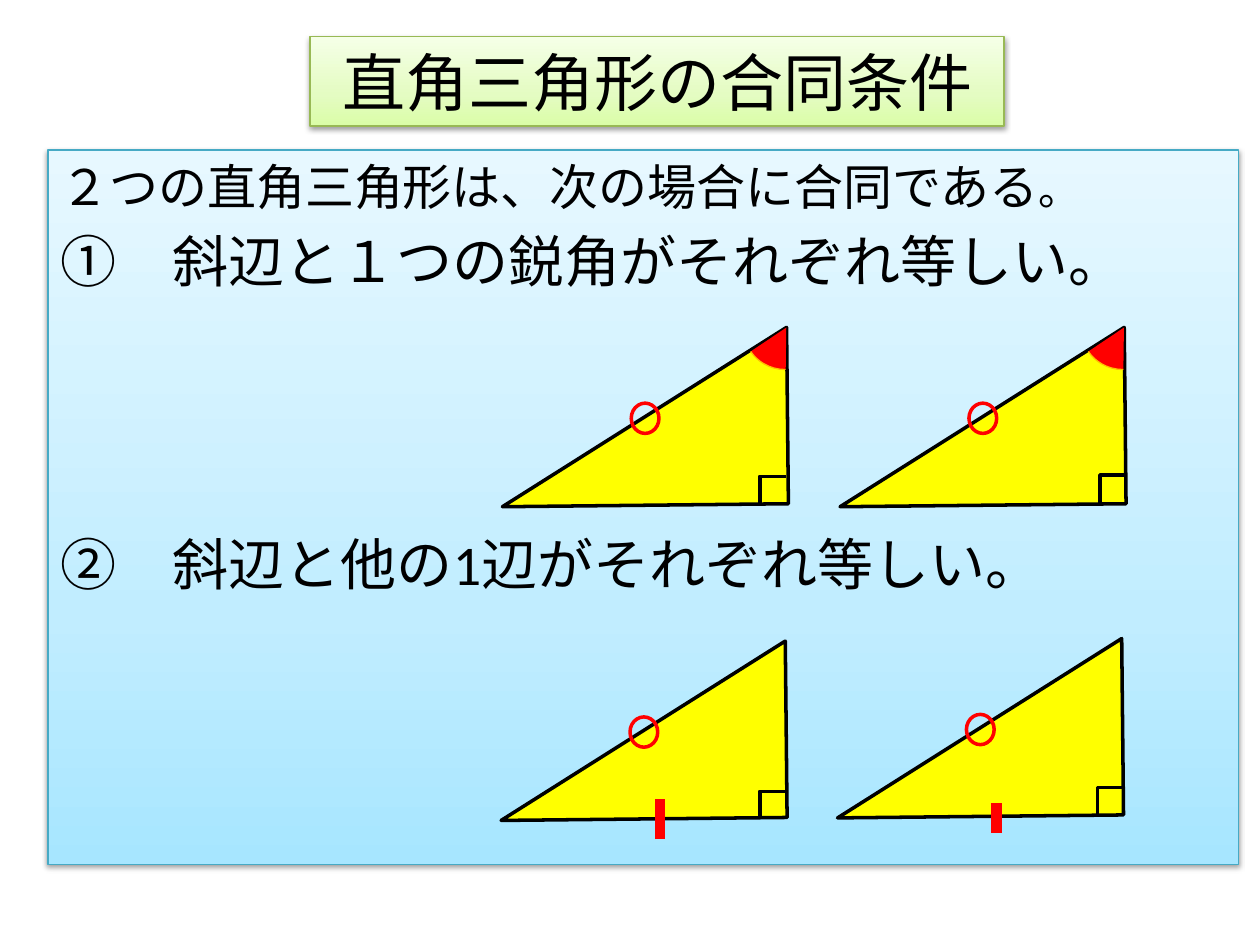
from copy import deepcopy

from lxml.etree import SubElement
from pptx import Presentation
from pptx.dml.color import RGBColor
from pptx.enum.shapes import MSO_CONNECTOR, MSO_SHAPE
from pptx.enum.text import MSO_ANCHOR, MSO_AUTO_SIZE, PP_ALIGN
from pptx.oxml import parse_xml
from pptx.oxml.ns import nsdecls, qn
from pptx.util import Inches, Pt

THEME = {
    "font": "Calibri", "text": "000000", "outline": "000000",
    "triangle": "FFFF00", "mark": "FF0000", "angle_edge": "FFC000",
    "title_size": 36, "lead_size": 28, "stop_size": 24, "condition_size": 32,
    "title_gradient": [(0, "DAFDA7"), (0.35, "E4FCC2"), (1, "F5FFE7")],
    "title_edge": "98B955",
    "body_gradient": [(0, "A7E6FF"), (0.35, "C1EDFF"), (1, "E7F8FF")],
    "body_edge": "46AAC5",
}

TITLE = "直角三角形の合同条件"
TITLE_BOX = (2.46, 0.29, 5.51, 0.71)
BODY_BOX = (0.38, 1.19, 9.45, 5.67)
LEAD, LEAD_STOP = "２つの直角三角形は、次の場合に合同である", "。"
# condition, space above in points (the second leaves room for the first figures)
CONDITIONS = [
    ("①\u3000斜辺と１つの鋭角がそれぞれ等しい。", 6.4),
    ("②\u3000斜辺と他の1辺がそれぞれ等しい。", 135),
]
# triangle corner, right-angle mark corner, base tick (x, bottom, top) or None
FIGURES = [
    ((3.98, 2.61), (6.03, 3.78), None),
    ((6.66, 2.61), (8.73, 3.77), None),
    ((3.97, 5.10), (6.03, 6.28), (5.24, 6.66, 6.34)),
    ((6.64, 5.08), (8.71, 6.25), (7.91, 6.61, 6.37)),
]
TRIANGLE_SIZE = (2.27, 1.40)
TRIANGLE_TILT = 359.4
RIGHT_ANGLE_SIZE = (0.21, 0.22)
CIRCLE_OFFSET, CIRCLE_SIZE = (1.03, 0.59), (0.22, 0.24)
ANGLE_OFFSET, ANGLE_SIZE = (1.92, -0.34), (0.68, 0.66)
ANGLE_TURN, ANGLE_SPAN = 151.1, (179.81, 213.06)


def color(name):
    return RGBColor.from_string(THEME[name])


def set_line(shape, name, width):
    shape.line.color.rgb = color(name)
    shape.line.width = Pt(width)


def style_panel(placeholder, box, part):
    """Place a placeholder and give it a gradient, an edge and a soft shadow."""
    (placeholder.left, placeholder.top,
     placeholder.width, placeholder.height) = map(Inches, box)
    fill = placeholder.fill
    fill.gradient()
    fill.gradient_angle = 90
    properties = placeholder._element.spPr
    stops = properties.find(".//" + qn("a:gsLst"))
    stops.insert(1, deepcopy(stops[0]))
    for stop, (position, rgb) in zip(fill.gradient_stops, THEME[part + "_gradient"]):
        stop.position = position
        stop.color.rgb = RGBColor.from_string(rgb)
    set_line(placeholder, part + "_edge", 0.75)
    properties.append(parse_xml(
        f'<a:effectLst {nsdecls("a")}><a:outerShdw blurRad="{Pt(3.1)}" '
        f'dist="{Pt(1.6)}" dir="5400000" rotWithShape="0"><a:srgbClr val="000000">'
        '<a:alpha val="38000"/></a:srgbClr></a:outerShdw></a:effectLst>'))


def set_font(font, size):
    font.name = THEME["font"]
    font.size = Pt(size)
    font.color.rgb = color("text")


def remove_bullet(paragraph):
    properties = paragraph._p.get_or_add_pPr()
    properties.set("marL", "0")
    properties.set("indent", "0")
    SubElement(properties, qn("a:buNone"))


def write_title(title):
    style_panel(title, TITLE_BOX, "title")
    frame = title.text_frame
    frame.text = TITLE
    frame.auto_size = MSO_AUTO_SIZE.NONE
    frame.vertical_anchor = MSO_ANCHOR.MIDDLE
    frame.paragraphs[0].alignment = PP_ALIGN.CENTER
    set_font(frame.paragraphs[0].font, THEME["title_size"])


def write_body(body):
    style_panel(body, BODY_BOX, "body")
    frame = body.text_frame
    frame.auto_size = MSO_AUTO_SIZE.NONE
    lead = frame.paragraphs[0]
    remove_bullet(lead)
    for words, size in ((LEAD, "lead_size"), (LEAD_STOP, "stop_size")):
        run = lead.add_run()
        run.text = words
        set_font(run.font, THEME[size])
    for words, gap in CONDITIONS:
        condition = frame.add_paragraph()
        condition.text = words
        remove_bullet(condition)
        condition.space_before = Pt(gap)
        set_font(condition.font, THEME["condition_size"])


def add_part(shapes, preset, corner, size, fill, edge, width, offset=(0, 0)):
    left, top = (start + shift for start, shift in zip(corner, offset))
    part = shapes.add_shape(preset, *map(Inches, (left, top, *size)))
    part.shadow.inherit = False
    if fill:
        part.fill.solid()
        part.fill.fore_color.rgb = color(fill)
    else:
        part.fill.background()
    set_line(part, edge, width)
    return part


def add_right_angle(shapes, corner):
    left, top = corner
    width, height = RIGHT_ANGLE_SIZE
    builder = shapes.build_freeform(Inches(left + width), Inches(top))
    builder.add_line_segments(
        [(Inches(left), Inches(top)), (Inches(left), Inches(top + height))], close=False)
    mark = builder.convert_to_shape()
    mark.shadow.inherit = False
    mark.fill.background()
    set_line(mark, "outline", 2)


def add_tick(shapes, x, bottom, top):
    tick = shapes.add_connector(
        MSO_CONNECTOR.STRAIGHT, *map(Inches, (x, bottom, x, top)))
    set_line(tick, "mark", 6)
    SubElement(tick._element.spPr, qn("a:effectLst"))


def add_figure(shapes, corner, right_angle, tick):
    triangle = add_part(shapes, MSO_SHAPE.ISOSCELES_TRIANGLE, corner, TRIANGLE_SIZE,
                        "triangle", "outline", 2)
    triangle.adjustments[0] = 1
    triangle.rotation = TRIANGLE_TILT
    add_right_angle(shapes, right_angle)
    if tick:
        add_tick(shapes, *tick)
    else:
        angle = add_part(shapes, MSO_SHAPE.ARC, corner, ANGLE_SIZE,
                         "mark", "angle_edge", 0.75, ANGLE_OFFSET)
        angle.adjustments[0], angle.adjustments[1] = ANGLE_SPAN
        angle.rotation = ANGLE_TURN
    add_part(shapes, MSO_SHAPE.OVAL, corner, CIRCLE_SIZE, None, "mark", 2, CIRCLE_OFFSET)


def main():
    deck = Presentation()
    deck.slide_width, deck.slide_height = Inches(10), Inches(7.5)
    slide = deck.slides.add_slide(deck.slide_layouts[1])
    write_title(slide.shapes.title)
    write_body(slide.placeholders[1])
    for figure in FIGURES:
        add_figure(slide.shapes, *figure)
    deck.save("out.pptx")


if __name__ == "__main__":
    main()
